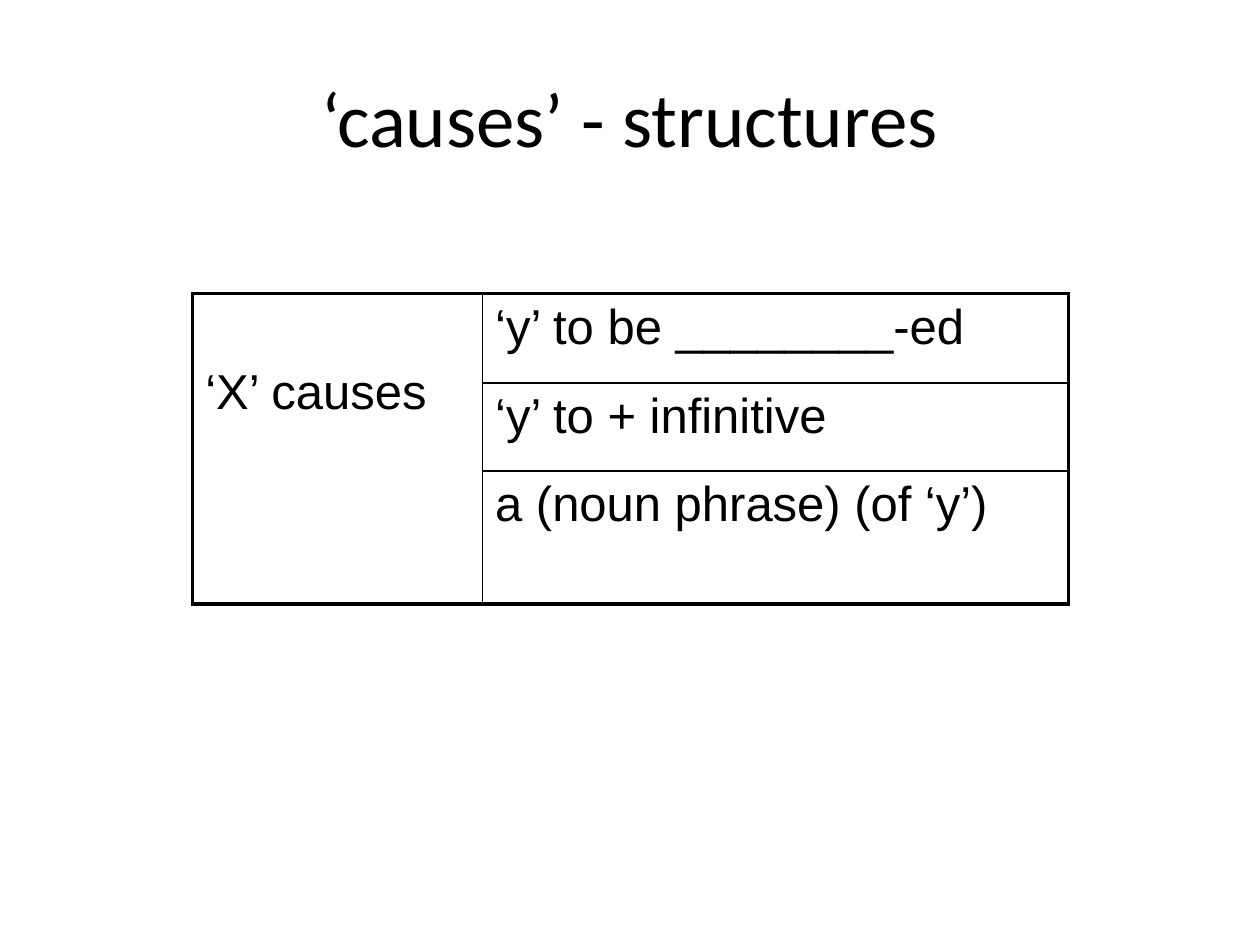
"""Build a slide that shows the sentence structures used with 'causes'."""
from dataclasses import dataclass

from lxml.etree import SubElement as Sub
from pptx import Presentation as Deck
from pptx.dml.color import RGBColor as Color
from pptx.enum.text import MSO_ANCHOR as Anchor, PP_ALIGN as Align
from pptx.oxml.ns import qn
from pptx.util import Inches, Pt

BLACK = Color(0, 0, 0)
WIDE, HIGH = Inches(10), Inches(7.5)
COLS = (2.3, 4.65)
ROWS = (0.71, 0.7, 1.05)
THICK, THIN = Pt(2.25), Pt(1)


@dataclass
class Entry:
    row: int
    col: int
    text: str
    top: float = 0.05


ENTRIES = (
    Entry(0, 0, "‘X’ causes", 0.57),
    Entry(0, 1, "‘y’ to be ________-ed"),
    Entry(1, 1, "‘y’ to + infinitive"),
    Entry(2, 1, "a (noun phrase) (of ‘y’)"),
)


def set_all(item: object, values: dict) -> None:
    for name, value in values.items():
        setattr(item, name, value)


def style(par, face: str, size: int) -> None:
    set_all(par.font, {"name": face, "size": Pt(size)})
    par.font.color.rgb = BLACK


def border(cell, row: int, col: int) -> None:
    last = len(ROWS) - 1
    outer = {
        "L": col == 0,
        "R": col == 1,
        "T": col == 0 or row == 0,
        "B": col == 0 or row == last,
    }
    props = cell._tc.get_or_add_tcPr()
    for side, edge in outer.items():
        line = Sub(props, qn(f"a:ln{side}"), w=str(THICK if edge else THIN))
        fill = Sub(line, qn("a:solidFill"))
        Sub(fill, qn("a:srgbClr"), val=str(BLACK))
    cell.fill.background()


def write(table, entry: Entry) -> None:
    cell = table.cell(entry.row, entry.col)
    cell.text = entry.text
    set_all(cell, {"margin_top": Inches(entry.top), "vertical_anchor": Anchor.TOP})
    par = cell.text_frame.paragraphs[0]
    par.space_before = Pt(5.6)
    style(par, "Arial", 28)


def add_grid(slide) -> None:
    frame = slide.shapes.add_table(
        len(ROWS), len(COLS), Inches(1.53), Inches(2.33),
        Inches(sum(COLS)), Inches(sum(ROWS)))
    table = frame.table
    set_all(table, {"first_row": False, "horz_banding": False})
    for col, width in zip(table.columns, COLS):
        col.width = Inches(width)
    for row, height in zip(table.rows, ROWS):
        row.height = Inches(height)
    for row in range(len(ROWS)):
        for col in range(len(COLS)):
            border(table.cell(row, col), row, col)
    table.cell(0, 0).merge(table.cell(len(ROWS) - 1, 0))
    for entry in ENTRIES:
        write(table, entry)


def add_title(slide) -> None:
    title = slide.shapes.title
    set_all(title, {
        "left": int(WIDE * 0.05), "top": int(HIGH * 0.04),
        "width": int(WIDE * 0.9), "height": Inches(1.25),
        "text": "‘causes’ - structures",
    })
    title.text_frame.vertical_anchor = Anchor.MIDDLE
    par = title.text_frame.paragraphs[0]
    par.alignment = Align.CENTER
    style(par, "Calibri", 44)


def main() -> None:
    deck = Deck()
    set_all(deck, {"slide_width": WIDE, "slide_height": HIGH})
    slide = deck.slides.add_slide(deck.slide_layouts[5])
    add_title(slide)
    add_grid(slide)
    deck.save("out.pptx")


if __name__ == "__main__":
    main()
